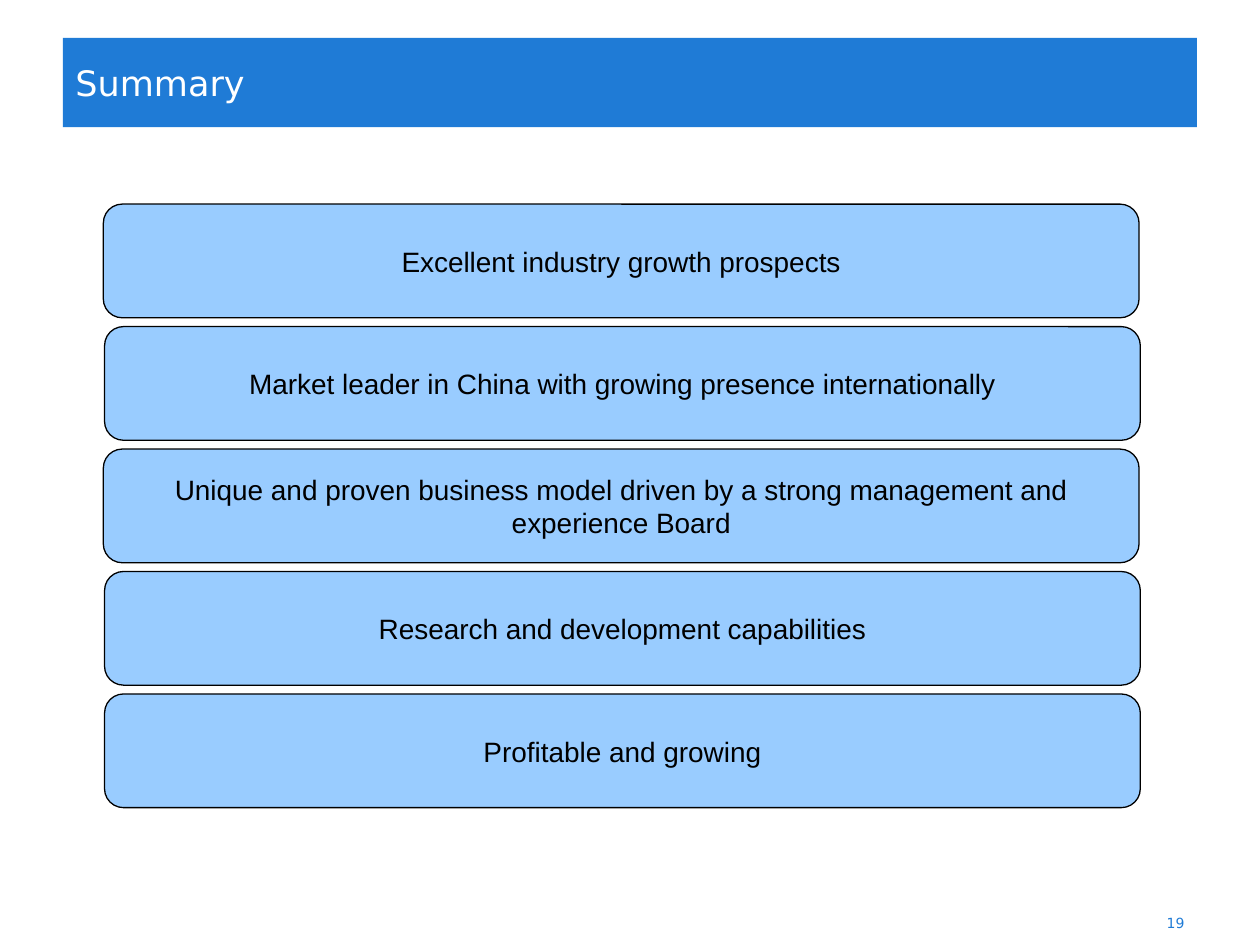
import pptx
import pptx.util
import pptx.dml.color
import pptx.enum.shapes
import pptx.enum.text

Inches = pptx.util.Inches
Pt = pptx.util.Pt
SHAPE = pptx.enum.shapes.MSO_SHAPE
ALIGN = pptx.enum.text.PP_ALIGN
WIDE, HIGH = 10, 7.5
BLUE, PALE, BLACK, WHITE = "1F7BD6", "99CCFF", "000000", "FFFFFF"
POINTS = [
    "Excellent industry growth prospects",
    "Market leader in China with growing presence internationally",
    "Unique and proven business model driven by a strong management and experience Board",
    "Research and development capabilities",
    "Profitable and growing",
]
SHIFTS = [0, 0.01, 0, 0.01, 0.01]


def color(code):
    return pptx.dml.color.RGBColor.from_string(code)


def write(shape, text, size, font, ink, align):
    frame = shape.text_frame
    frame.word_wrap = True
    frame.vertical_anchor = pptx.enum.text.MSO_ANCHOR.MIDDLE
    para = frame.paragraphs[0]
    para.text = text
    para.alignment = align
    para.font.size = Pt(size)
    para.font.name = font
    para.font.color.rgb = color(ink)


def block(slide, kind, box, fill, line=None):
    shape = slide.shapes.add_shape(kind, *map(Inches, box))
    shape.shadow.inherit = False
    shape.fill.solid()
    shape.fill.fore_color.rgb = color(fill)
    if line:
        shape.line.color.rgb = color(line)
        shape.line.width = Pt(0.75)
    else:
        shape.line.fill.background()
    return shape


def title(slide, box, text):
    bar = block(slide, SHAPE.RECTANGLE, box, BLUE)
    write(bar, text, 20, "DejaVu Sans", WHITE, ALIGN.LEFT)


def stack(slide, box, items):
    """Stack rounded bars evenly, with a small gap between them."""
    left, top, width, height = box
    gap = 0.07
    tall = (height - gap * (len(items) - 1)) / len(items)
    for row, (text, shift) in enumerate(zip(items, SHIFTS)):
        place = (left + shift, top + row * (tall + gap), width, tall)
        bar = block(slide, SHAPE.ROUNDED_RECTANGLE, place, PALE, BLACK)
        write(bar, text, 16, "Arial", BLACK, ALIGN.CENTER)


def number(slide, box, text):
    label = slide.shapes.add_textbox(*map(Inches, box))
    write(label, text, 8, "DejaVu Sans", BLUE, ALIGN.RIGHT)


def main():
    deck = pptx.Presentation()
    deck.slide_width, deck.slide_height = Inches(WIDE), Inches(HIGH)
    slide = deck.slides.add_slide(deck.slide_layouts[6])
    edge = 0.05 * WIDE
    title(slide, (edge, 0.04 * HIGH, WIDE - 2 * edge, 0.71), "Summary")
    number(slide, (7.17, 0.95 * HIGH, 2.33, 0.4), "19")
    stack(slide, (0.82, 1.62, 8.22, 4.79), POINTS)
    deck.save("out.pptx")


if __name__ == "__main__":
    main()
